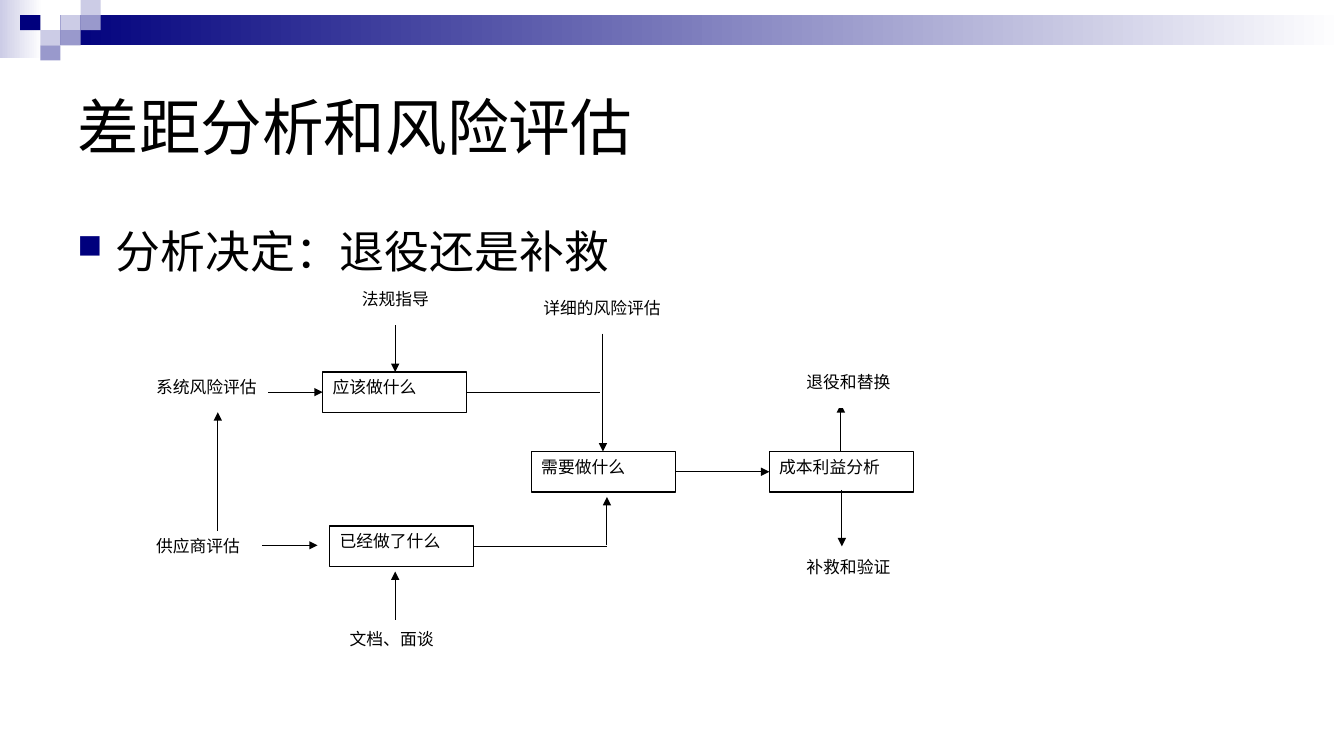
from lxml import etree
from pptx import Presentation
from pptx.dml.color import RGBColor
from pptx.enum.shapes import MSO_CONNECTOR, MSO_SHAPE
from pptx.enum.text import MSO_ANCHOR, PP_ALIGN
from pptx.oxml.ns import qn
from pptx.util import Pt

RECTANGLE = MSO_SHAPE.RECTANGLE
STRAIGHT = MSO_CONNECTOR.STRAIGHT
LEFT = PP_ALIGN.LEFT
TOP, MIDDLE = MSO_ANCHOR.TOP, MSO_ANCHOR.MIDDLE

EMU_PER_PX = 9144
FONT = "Arial"
COLORS = {
    "ink": "000000",
    "paper": "FFFFFF",
    "navy": "00007D",
    "medium": "9999CC",
    "pale": "CCCCE6",
}
NODE_WIDTH, NODE_HEIGHT = 143, 40
TILE_WIDTH, TILE_HEIGHT = 20, 15

TILES = [
    (3, 1, "pale"),
    (4, 0, "pale"),
    (4, 1, "medium"),
    (2, 2, "pale"),
    (1, 1, "navy"),
    (3, 2, "medium"),
    (2, 3, "medium"),
]
INPUTS_AND_OUTCOMES = [
    ("系统风险评估", 145, 369),
    ("供应商评估", 145, 527),
    ("法规指导", 349, 282),
    ("文档、面谈", 337, 619),
    ("详细的风险评估", 529, 290),
    ("退役和替换", 790, 364),
    ("补救和验证", 790, 547),
]
STEPS = [
    ("应该做什么", 320, 369),
    ("已经做了什么", 327, 522),
    ("需要做什么", 527, 448),
    ("成本利益分析", 763, 448),
]
ARROWS_BEHIND_NODES = [
    (392, 313, 392, 369),
    (834, 448, 834, 401),
]
ARROWS = [
    (216, 527, 216, 409),
    (266, 389, 320, 389),
    (260, 541, 315, 541),
    (392, 615, 392, 567),
    (598, 331, 598, 448),
    (602, 541, 602, 493),
    (670, 468, 763, 468),
    (835, 486, 835, 542),
]
JOINING_LINES = [
    (470, 542, 602, 542),
    (463, 389, 595, 389),
]


def px(*lengths):
    return [length * EMU_PER_PX for length in lengths]


def rgb(color):
    return RGBColor.from_string(COLORS[color])


def add_rectangle(slide, left, top, width, height):
    rectangle = slide.shapes.add_shape(RECTANGLE, *px(left, top, width, height))
    rectangle.shadow.inherit = False
    rectangle.line.fill.background()
    return rectangle


def add_fading_band(slide, left, top, width, height, start):
    fill = add_rectangle(slide, left, top, width, height).fill
    fill.gradient()
    fill.gradient_angle = 0
    for stop, position, color in zip(fill.gradient_stops, (0, 1), (start, "paper")):
        stop.position = position
        stop.color.rgb = rgb(color)


def add_tile(slide, column, row, color):
    tile = add_rectangle(slide, column * TILE_WIDTH, row * TILE_HEIGHT,
                         TILE_WIDTH, TILE_HEIGHT)
    tile.fill.solid()
    tile.fill.fore_color.rgb = rgb(color)


def write(frame, text, size, anchor=TOP):
    frame.word_wrap = True
    frame.vertical_anchor = anchor
    paragraph = frame.paragraphs[0]
    paragraph.text = text
    paragraph.alignment = LEFT
    paragraph.font.name = FONT
    paragraph.font.size = Pt(size)
    paragraph.font.color.rgb = rgb("ink")
    return paragraph


def add_heading(slide, text):
    heading = slide.shapes.add_textbox(*px(67, 50, 1200, 150))
    write(heading.text_frame, text, 44, MIDDLE)


def add_bullet(slide, text):
    body = slide.shapes.add_textbox(*px(67, 217, 1200, 442))
    properties = write(body.text_frame, text, 32)._p.get_or_add_pPr()
    indent, = px(38)
    properties.set("marL", str(indent))
    properties.set("indent", str(-indent))
    bullet_color = etree.SubElement(properties, qn("a:buClr"))
    etree.SubElement(bullet_color, qn("a:srgbClr"), val=COLORS["navy"])
    etree.SubElement(properties, qn("a:buSzPct"), val="75000")
    etree.SubElement(properties, qn("a:buChar"), char="■")
    properties.append(properties.find(qn("a:defRPr")))


def add_node(slide, text, left, top, outline):
    node = add_rectangle(slide, left, top, NODE_WIDTH, NODE_HEIGHT)
    node.fill.solid()
    node.fill.fore_color.rgb = rgb("paper")
    node.line.color.rgb = rgb(outline)
    node.line.width = Pt(1)
    write(node.text_frame, text, 12)


def add_line(slide, ends, arrow=True):
    line = slide.shapes.add_connector(STRAIGHT, *px(*ends))
    line.line.color.rgb = rgb("ink")
    line.line.width = Pt(0.75)
    if arrow:
        etree.SubElement(line.line._get_or_add_ln(), qn("a:tailEnd"), type="triangle")
    etree.SubElement(line._element.spPr, qn("a:effectLst"))


def main():
    presentation = Presentation()
    presentation.slide_width, presentation.slide_height = px(1333, 750)
    slide = presentation.slides.add_slide(presentation.slide_layouts[6])

    add_fading_band(slide, 0, 0, 42, 58, "pale")
    add_fading_band(slide, 60, 15, 1273, 30, "navy")
    for tile in TILES:
        add_tile(slide, *tile)

    add_heading(slide, "差距分析和风险评估")
    add_bullet(slide, "分析决定：退役还是补救")

    for ends in ARROWS_BEHIND_NODES:
        add_line(slide, ends)
    for node in INPUTS_AND_OUTCOMES:
        add_node(slide, *node, outline="paper")
    for node in STEPS:
        add_node(slide, *node, outline="ink")
    for ends in ARROWS:
        add_line(slide, ends)
    for ends in JOINING_LINES:
        add_line(slide, ends, arrow=False)

    presentation.save("out.pptx")


if __name__ == "__main__":
    main()
